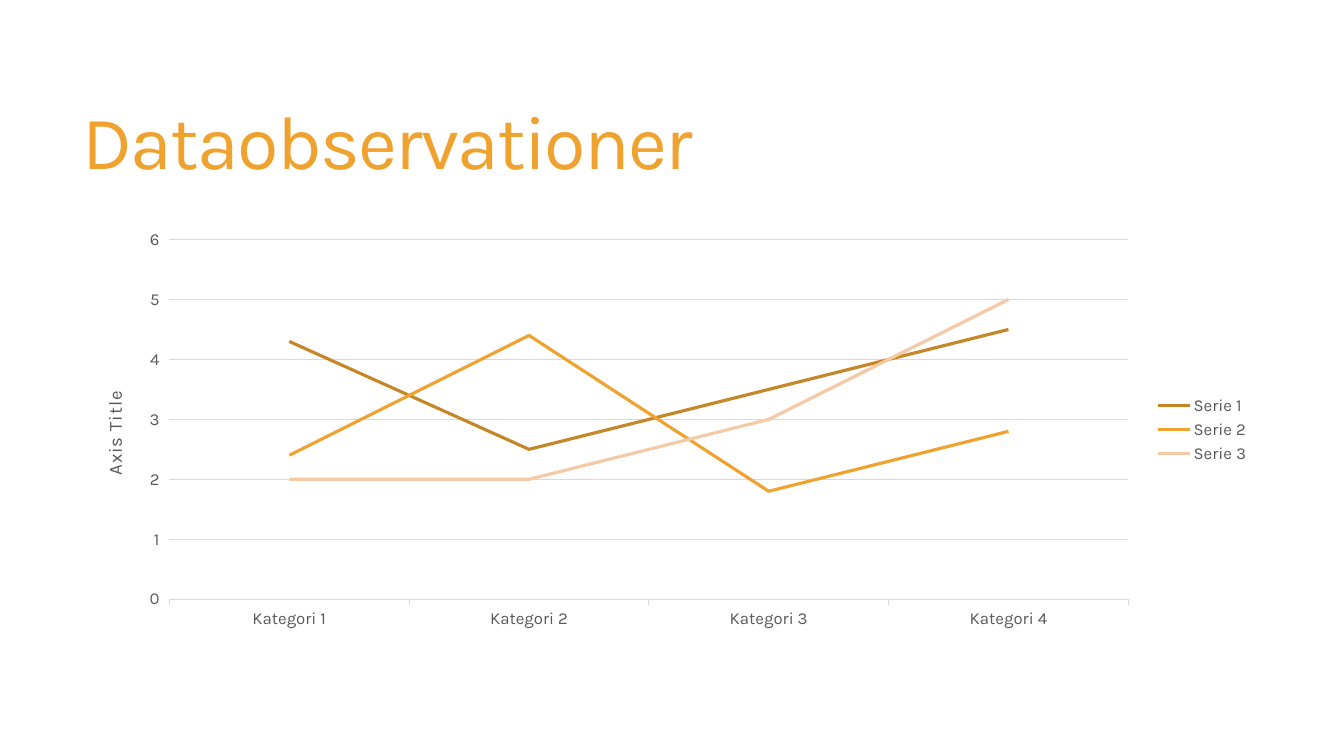
import pptx
import pptx.chart.data
import pptx.dml.color
import pptx.enum.chart
import pptx.enum.text
import pptx.oxml
import pptx.oxml.ns
import pptx.util

Pt = pptx.util.Pt
FONT = "Karla"
GREY, GRID, ORANGE = "595959", "D9D9D9", "F0A22E"
SERIES = {
    "Serie 1": ((4.3, 2.5, 3.5, 4.5), "C78626"),
    "Serie 2": ((2.4, 4.4, 1.8, 2.8), ORANGE),
    "Serie 3": ((2, 2, 3, 5), "F5C9A4"),
}


def style(target, color, **formats):
    """Colour a font or a line and set its other attributes."""
    color_format = target.color
    color_format.rgb = pptx.dml.color.RGBColor.from_string(color)
    for name, value in formats.items():
        setattr(target, name, value)


def place(element, **fractions):
    """Give a chart part a manual layout in fractions of the chart."""
    layout = element.find(pptx.oxml.ns.qn("c:layout"))
    if layout is None:
        layout = pptx.oxml.parse_xml(f'<c:layout {pptx.oxml.ns.nsdecls("c")}/>')
        element.insert(0, layout)
    manual = layout.makeelement(pptx.oxml.ns.qn("c:manualLayout"))
    layout.append(manual)
    for name, value in fractions.items():
        child = manual.makeelement(pptx.oxml.ns.qn(f"c:{name}"), {"val": str(value)})
        manual.append(child)


presentation = pptx.Presentation()
presentation.slide_width, presentation.slide_height = Pt(960), Pt(540)
slide = presentation.slides.add_slide(presentation.slide_layouts[6])

# Title
title = slide.shapes.add_textbox(Pt(51.84), Pt(39.6), Pt(848.16), Pt(130.32))
title_frame = title.text_frame
title_frame.word_wrap = True
title_frame.vertical_anchor = pptx.enum.text.MSO_ANCHOR.MIDDLE
title_paragraph = title_frame.paragraphs[0]
title_paragraph.line_spacing = 0.85
title_run = title_paragraph.add_run()
title_run.text = "Dataobservationer"
style(title_run.font, ORANGE, name=FONT, size=Pt(54))
title_run.font._element.set("spc", "-120")

# Line chart
chart_data = pptx.chart.data.CategoryChartData()
chart_data.categories = [f"Kategori {number}" for number in range(1, 5)]
for name, (values, color) in SERIES.items():
    chart_data.add_series(name, values)
chart = slide.shapes.add_chart(
    pptx.enum.chart.XL_CHART_TYPE.LINE,
    Pt(53.28), Pt(158.4), Pt(846.72), Pt(296.64), chart_data,
).chart
chart.has_title = False
style(chart.font, GREY, name=FONT, size=Pt(12))
place(chart._chartSpace.chart.plotArea, layoutTarget="inner", xMode="edge",
      yMode="edge", x=0.08, y=0.043, w=0.809, h=0.866)

plot = chart.plots[0]
plot.vary_by_categories = False
for series, (values, color) in zip(plot.series, SERIES.values()):
    series.smooth = False
    series.marker.style = pptx.enum.chart.XL_MARKER_STYLE.NONE
    style(series.format.line, color, width=Pt(2.25))

# Axes
value_axis, category_axis = chart.value_axis, chart.category_axis
for axis in (value_axis, category_axis):
    axis.major_tick_mark = pptx.enum.chart.XL_TICK_MARK.OUTSIDE
    style(axis.tick_labels.font, GREY, name=FONT, size=Pt(12))
style(category_axis.format.line, GRID, width=Pt(0.75))
value_axis.format.line.fill.background()
style(value_axis.major_gridlines.format.line, GRID, width=Pt(0.75))
for name, value in {"minimum_scale": 0, "maximum_scale": 6, "major_unit": 1}.items():
    setattr(value_axis, name, value)

axis_title = value_axis.axis_title
axis_frame = axis_title.text_frame
axis_frame._txBody.bodyPr.set("rot", "-5400000")
axis_frame._txBody.bodyPr.set("vert", "horz")
axis_run = axis_frame.paragraphs[0].add_run()
axis_run.text = "Axis Title"
style(axis_run.font, GREY, name=FONT, size=Pt(13.3), bold=False)
axis_run.font._element.set("spc", "50")
place(axis_title._element, xMode="edge", yMode="edge", x=0.02, y=0.4)

# Legend
chart.has_legend = True
chart.legend.position = pptx.enum.chart.XL_LEGEND_POSITION.RIGHT
chart.legend.include_in_layout = False
style(chart.legend.font, GREY, name=FONT, size=Pt(12))

presentation.save("out.pptx")
